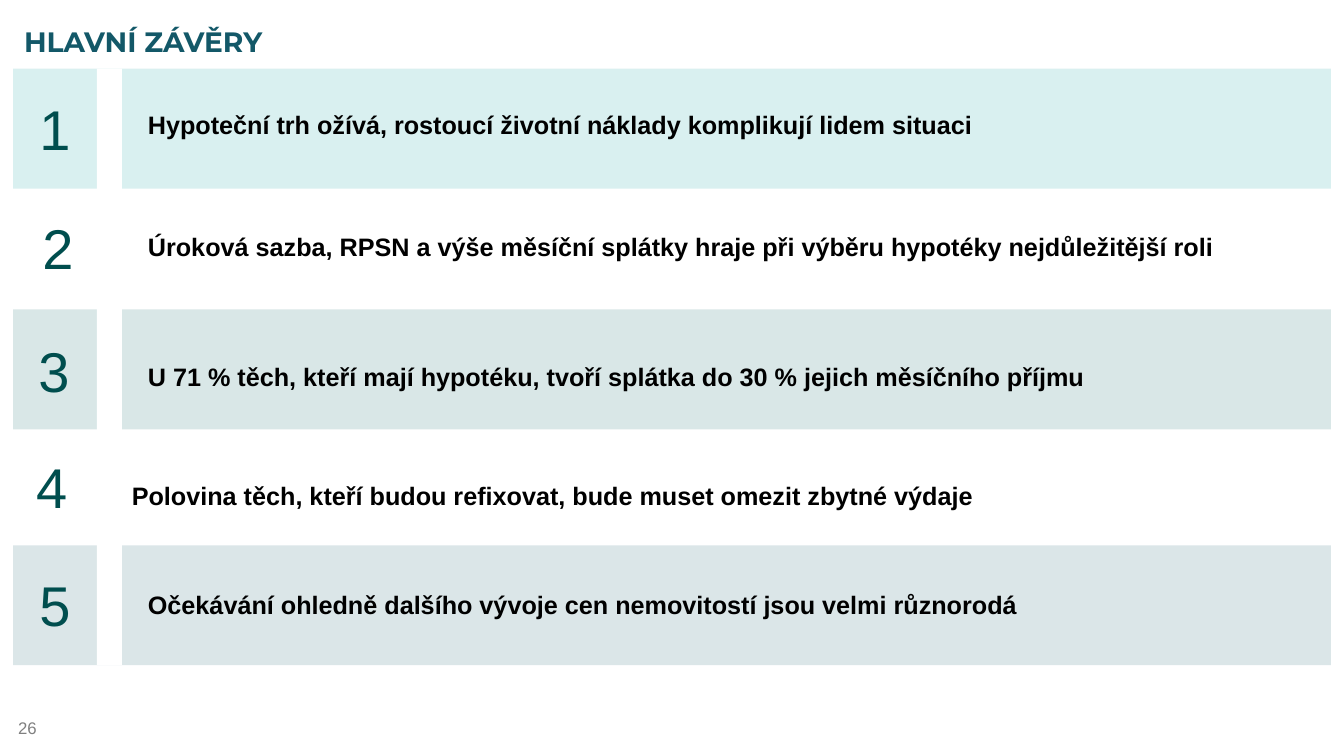
import pptx
import pptx.util
import pptx.dml.color
import pptx.enum.shapes
import pptx.enum.text
import pptx.oxml
import pptx.oxml.ns

Pt = pptx.util.Pt
Shape = pptx.enum.shapes.MSO_SHAPE
Align = pptx.enum.text.PP_ALIGN
Anchor = pptx.enum.text.MSO_ANCHOR

# Content
TITLE = "HLAVNÍ ZÁVĚRY"
PAGE = "26"

# Point text, (text left, text top), (number left, number top)
POINTS = [
    ("Hypoteční trh ožívá, rostoucí životní náklady komplikují lidem situaci",
     (98.6, 74.2), (7.2, 64.1)),
    ("Úroková sazba, RPSN a výše měsíční splátky hraje při výběru hypotéky nejdůležitější roli",
     (98.6, 162), (9.4, 149)),
    ("U 71 % těch, kteří mají hypotéku, tvoří splátka do 30 % jejich měsíčního příjmu",
     (98.6, 254.2), (6.5, 236.9)),
    ("Polovina těch, kteří budou refixovat, bude muset omezit zbytné výdaje",
     (87.1, 339.8), (5, 319.7)),
    ("Očekávání ohledně dalšího vývoje cen nemovitostí jsou velmi různorodá",
     (98.6, 417.6), (7.2, 403.9)),
]

# Band top, colour
BANDS = [(49, "009D9C"), (221, "006260"), (389.5, "135868")]

THEME = {
    "body": "Arial", "head": "Montserrat",
    "title": "135868", "number": "004E4E", "text": "000000",
    "page": "808080", "white": "FFFFFF",
    "title_size": 20, "number_size": 40, "text_size": 18, "page_size": 12,
    "band_alpha": 15,
}

WIDTH, HEIGHT = 960, 540
BAND_H = 85.7
GAP_X, GAP_W = 69.1, 18


def color(code):
    return pptx.dml.color.RGBColor.from_string(code)


def add_block(slide, kind, box, code, alpha=None):
    block = slide.shapes.add_shape(kind, *map(Pt, box))
    block.shadow.inherit = False
    block.fill.solid()
    block.fill.fore_color.rgb = color(code)
    block.line.fill.background()
    if alpha is not None:
        tone = block.fill._xPr.find(".//" + pptx.oxml.ns.qn("a:srgbClr"))
        tone.append(pptx.oxml.parse_xml(
            f'<a:alpha {pptx.oxml.ns.nsdecls("a")} val="{alpha * 1000}"/>'))
    return block


def add_text(slide, box, text, role, face="body", bold=False,
             align=Align.LEFT, anchor=Anchor.TOP, inset=(7.2, 3.6)):
    label = slide.shapes.add_textbox(*map(Pt, box))
    frame = label.text_frame
    frame.word_wrap = True
    frame.vertical_anchor = anchor
    frame.margin_left = frame.margin_right = Pt(inset[0])
    frame.margin_top = frame.margin_bottom = Pt(inset[1])
    para = frame.paragraphs[0]
    para.alignment = align
    run = para.add_run()
    run.text = text
    run.font.name = THEME[face]
    run.font.size = Pt(THEME[role + "_size"])
    run.font.bold = bold
    run.font.color.rgb = color(THEME[role])


def main():
    deck = pptx.Presentation()
    deck.slide_width, deck.slide_height = Pt(WIDTH), Pt(HEIGHT)
    slide = deck.slides.add_slide(deck.slide_layouts[6])

    # Page number
    add_text(slide, (3.6, 505.4, 224, 28.8), PAGE, "page",
             anchor=Anchor.MIDDLE, inset=(9.4, 5))

    # Tinted bands
    for top, code in BANDS:
        add_block(slide, Shape.RECTANGLE, (0, top, WIDTH, BAND_H), code,
                  THEME["band_alpha"])

    # Title
    add_text(slide, (10.1, 5.8, 645, 47.5), TITLE, "title", "head",
             bold=True, anchor=Anchor.MIDDLE)

    # White border, and the gap between numbers and text
    border = add_block(slide, Shape.FRAME, (0, 0, WIDTH, HEIGHT), THEME["white"])
    border.adjustments[0] = 0.017
    first, last = BANDS[0][0], BANDS[-1][0]
    add_block(slide, Shape.RECTANGLE,
              (GAP_X, first, GAP_W, last + BAND_H - first), THEME["white"])

    # Numbered points
    for number, (text, spot, mark) in enumerate(POINTS, 1):
        add_text(slide, (*spot, WIDTH - spot[0], 28.8), text, "text", bold=True)
        add_text(slide, (*mark, 64, 55.4), str(number), "number",
                 align=Align.CENTER)

    deck.save("out.pptx")


if __name__ == "__main__":
    main()
